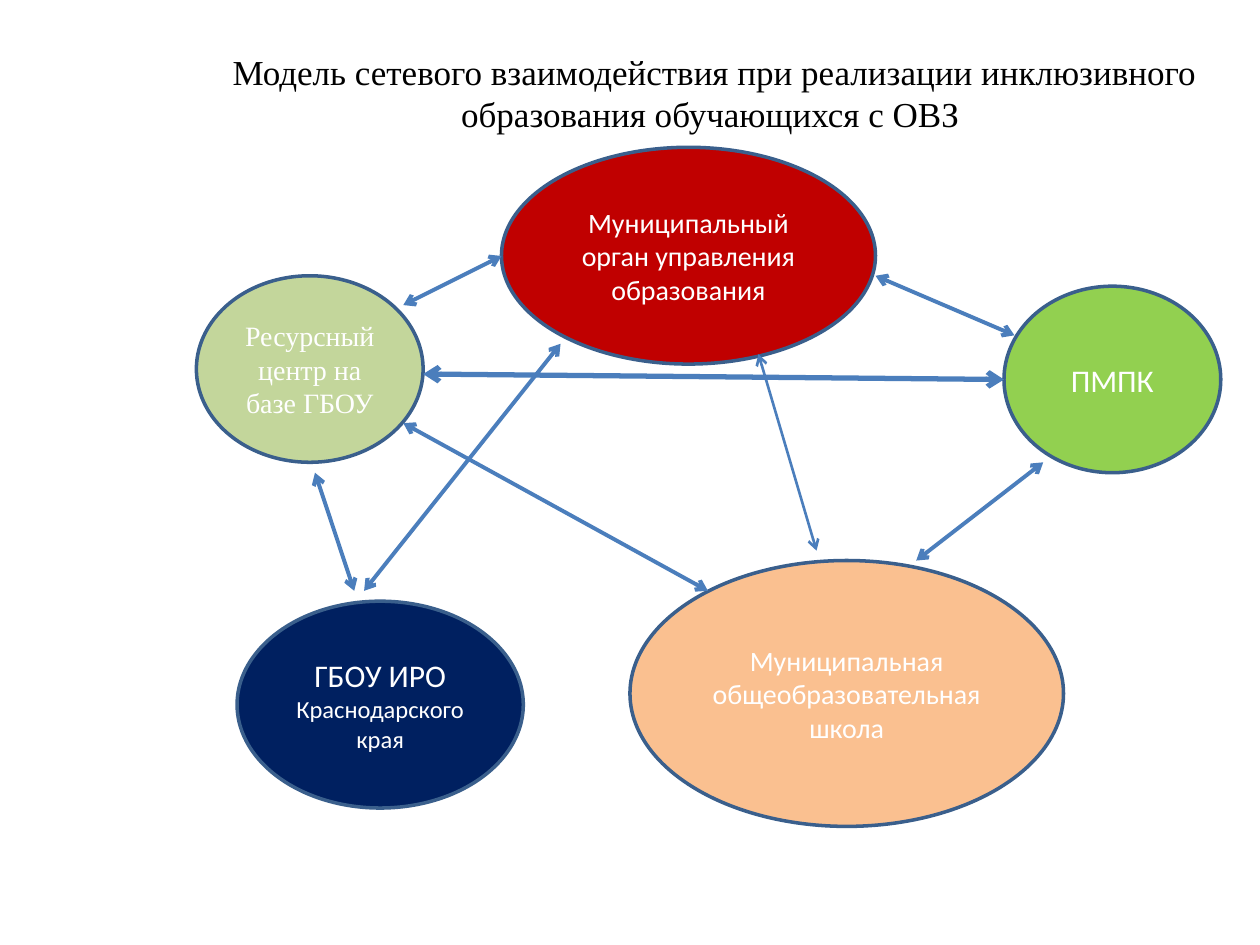
from lxml.etree import SubElement
from pptx import Presentation
from pptx.dml.color import RGBColor
from pptx.enum.shapes import MSO_CONNECTOR as Connector, MSO_SHAPE as Shape
from pptx.enum.text import MSO_ANCHOR as Anchor, PP_ALIGN as Align
from pptx.oxml.ns import qn
from pptx.util import Cm, Pt

BLACK = RGBColor(0x00, 0x00, 0x00)
WHITE = RGBColor(0xFF, 0xFF, 0xFF)
OUTLINE = RGBColor(0x3A, 0x5F, 0x8C)
ARROW = RGBColor(0x4B, 0x7E, 0xBC)
PEACH = RGBColor(0xFA, 0xC0, 0x90)
GREEN = RGBColor(0x92, 0xD0, 0x50)
RED = RGBColor(0xC0, 0x00, 0x00)
SAGE = RGBColor(0xC3, 0xD6, 0x9B)
NAVY = RGBColor(0x00, 0x20, 0x60)
SANS, SERIF = "Calibri", "Times New Roman"

# The closing space takes part in the centring of the second line.
TITLE = "Модель сетевого взаимодействия при реализации инклюзивного образования обучающихся с ОВЗ "
TITLE_BOX = (3.99, 0.76, 20.83, 2.21)

# (left, top, width, height) in cm, fill, font, [(text, size)]
PARTNERS = [
    ((12.7, 11.3, 8.74, 5.36), PEACH, SANS, [("Муниципальная общеобразовательная школа", 16)]),
    ((20.24, 5.77, 4.37, 3.76), GREEN, SANS, [("ПМПК", 18)]),
    ((10.11, 2.97, 7.54, 4.37), RED, SANS, [("Муниципальный орган управления образования", 16)]),
    ((3.96, 5.56, 4.57, 3.76), SAGE, SERIF, [("Ресурсный центр на базе ГБОУ", 16)]),
    ((4.78, 12.12, 5.77, 4.17), NAVY, SANS, [("ГБОУ ИРО ", 18), ("Краснодарского края", 14)]),
]

# (start x, start y, end x, end y) in cm, line width in points
LINKS = [
    ((6.35, 9.53, 7.14, 11.91), 2.25),     # resource centre - institute
    ((8.13, 6.15, 10.11, 5.16), 2.25),     # resource centre - municipal body
    ((17.65, 5.56, 20.45, 6.76), 2.25),    # municipal body - commission
    ((8.13, 8.53, 14.27, 11.91), 2.25),    # resource centre - school
    ((21.03, 9.32, 18.47, 11.3), 2.25),    # commission - school
    ((8.53, 7.54, 20.24, 7.65), 3),        # resource centre - commission
    ((11.3, 6.93, 7.34, 11.91), 2.25),     # municipal body - institute
    ((15.29, 7.14, 16.46, 11.1), 1.5),     # municipal body - school
]


def in_cm(lengths):
    return [Cm(length) for length in lengths]


def write(frame, runs, font_name, color):
    """Put the runs in one centred paragraph in the middle of the frame."""
    frame.word_wrap = True
    frame.vertical_anchor = Anchor.MIDDLE
    paragraph = frame.paragraphs[0]
    paragraph.alignment = Align.CENTER
    for text, size in runs:
        run = paragraph.add_run()
        run.text = text
        run.font.name = font_name
        run.font.size = Pt(size)
        run.font.color.rgb = color


def add_title(slide):
    title = slide.shapes.title
    title.left, title.top, title.width, title.height = in_cm(TITLE_BOX)
    write(title.text_frame, [(TITLE, 20)], SERIF, BLACK)


def add_partner(slide, box, fill, font_name, runs):
    partner = slide.shapes.add_shape(Shape.OVAL, *in_cm(box))
    partner.shadow.inherit = False
    partner.fill.solid()
    partner.fill.fore_color.rgb = fill
    partner.line.color.rgb = OUTLINE
    partner.line.width = Pt(2)
    write(partner.text_frame, runs, font_name, WHITE)


def add_link(slide, ends, width):
    """Draw a line with an open arrowhead at both ends."""
    link = slide.shapes.add_connector(Connector.STRAIGHT, *in_cm(ends))
    link.line.color.rgb = ARROW
    link.line.width = Pt(width)
    properties = link._element.spPr
    for end in ("a:headEnd", "a:tailEnd"):
        SubElement(properties.find(qn("a:ln")), qn(end), type="arrow")
    SubElement(properties, qn("a:effectLst"))


def main():
    deck = Presentation()
    deck.slide_width, deck.slide_height = in_cm((25.4, 19.05))
    slide = deck.slides.add_slide(deck.slide_layouts.get_by_name("Title Only"))
    add_title(slide)
    for partner in PARTNERS:
        add_partner(slide, *partner)
    for link in LINKS:
        add_link(slide, *link)
    deck.save("out.pptx")


if __name__ == "__main__":
    main()
